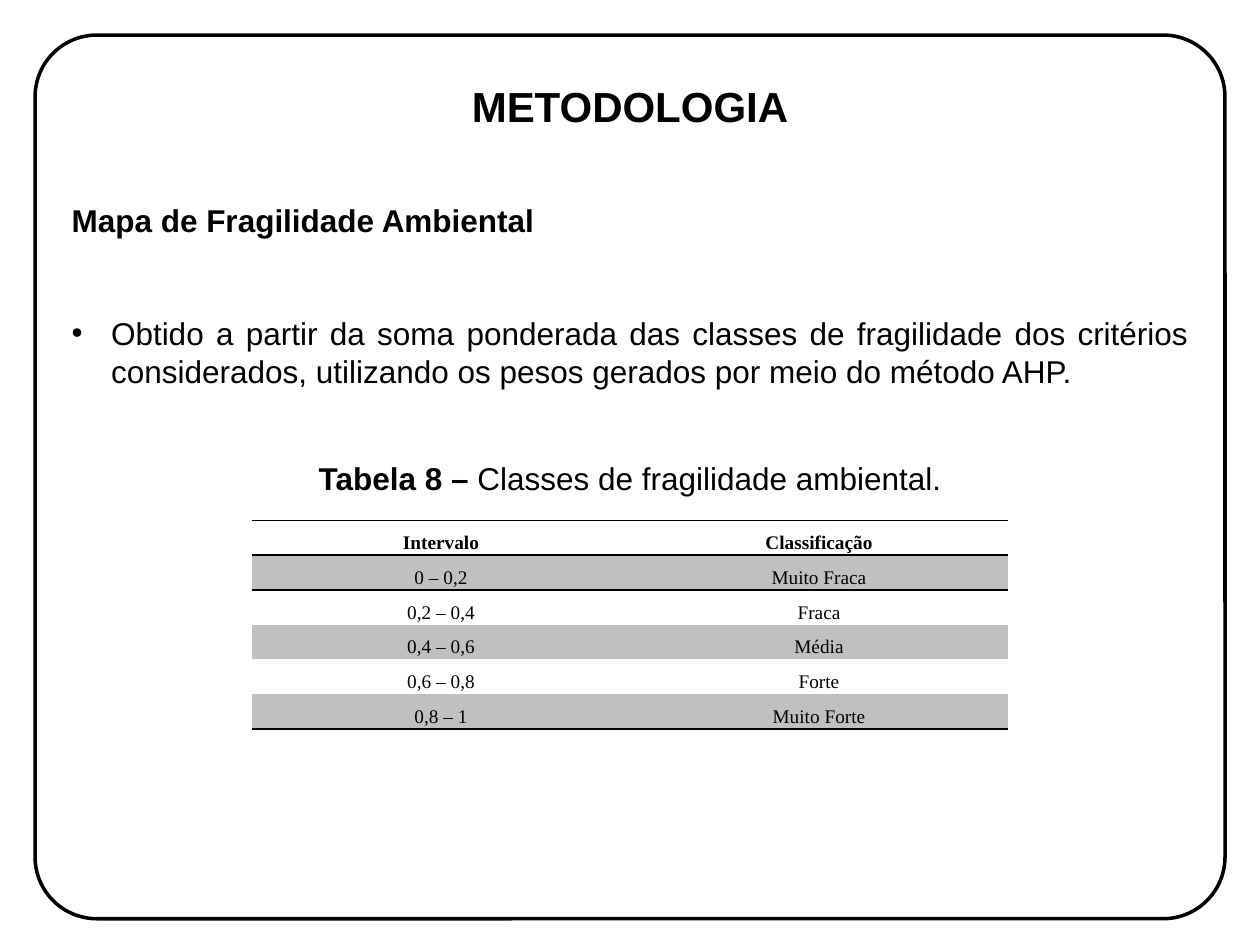
from pptx import Presentation
from pptx.dml.color import RGBColor
from pptx.enum import shapes, text
from pptx.oxml import parse_xml
from pptx.oxml.ns import nsdecls
from pptx.util import Pt

TITLE = "METODOLOGIA"
HEADING = "Mapa de Fragilidade Ambiental"
BULLET = ("Obtido a partir da soma ponderada das classes de fragilidade dos critérios "
          "considerados, utilizando os pesos gerados por meio do método AHP.")
CAPTION = [("Tabela 8 –", True), (" Classes de fragilidade ambiental.", False)]
ROWS = [
    ("Intervalo", "Classificação"),
    ("0 – 0,2", "Muito Fraca"),
    ("0,2 – 0,4", "Fraca"),
    ("0,4 – 0,6", "Média"),
    ("0,6 – 0,8", "Forte"),
    ("0,8 – 1", "Muito Forte"),
]
BLACK, GREY = "000000", "C0C0C0"
LINE_PITCH = 21.5
ROW_HEIGHT = 19.8
NO_TABLE_STYLE = "{2D5ABB26-0587-4C30-8999-92F81FD0307C}"


def color(value):
    return RGBColor.from_string(value)


def points(*values):
    return [Pt(value) for value in values]


def style(paragraph, size, align, bold=None, name="Arial"):
    paragraph.alignment = align
    font = paragraph.font
    font.size, font.name, font.bold = Pt(size), name, bold
    font.color.rgb = color(BLACK)


def add_frame(slide):
    frame = slide.shapes.add_shape(shapes.MSO_SHAPE.ROUNDED_RECTANGLE,
                                   *points(20, 20, 680, 505))
    frame.adjustments[0] = 0.07
    frame.fill.background()
    frame.line.color.rgb = color(BLACK)
    frame.line.width = Pt(2)
    frame.shadow.inherit = False


def add_title(slide):
    title = slide.shapes.title
    title.left, title.top, title.width, title.height = points(20, 21, 680, 79)
    title.text_frame.text = TITLE
    title.text_frame.vertical_anchor = text.MSO_ANCHOR.MIDDLE
    style(title.text_frame.paragraphs[0], 24, text.PP_ALIGN.CENTER, True)


def add_body(slide):
    frame = slide.shapes.add_textbox(*points(33.9, 111.6, 652.3, 247)).text_frame
    frame.word_wrap = True
    heading, bullet = frame.paragraphs[0], frame.add_paragraph()
    heading.text, bullet.text = HEADING, BULLET
    for paragraph, bold in ((heading, True), (bullet, False)):
        style(paragraph, 18, text.PP_ALIGN.JUSTIFY, bold)
        paragraph.line_spacing = Pt(LINE_PITCH)
    heading.space_after = Pt(2 * LINE_PITCH)
    properties = bullet._p.get_or_add_pPr()
    properties.set("marL", str(Pt(22.5)))
    properties.set("indent", str(Pt(-22.5)))
    marks = (f'<a:buFont {nsdecls("a")} typeface="Arial"/>',
             f'<a:buChar {nsdecls("a")} char="•"/>')
    position = list(properties).index(properties.defRPr) if hasattr(properties, "defRPr") \
        else len(properties) - 1
    for offset, mark in enumerate(marks):
        properties.insert(position + offset, parse_xml(mark))


def add_caption(slide):
    frame = slide.shapes.add_textbox(*points(173.3, 258.5, 373.4, 29)).text_frame
    frame.word_wrap = False
    paragraph = frame.paragraphs[0]
    style(paragraph, 18, text.PP_ALIGN.CENTER)
    for content, bold in CAPTION:
        run = paragraph.add_run()
        run.text = content
        run.font.bold = bold


def add_borders(cell, sides):
    properties = cell._tc.get_or_add_tcPr()
    for position, side in enumerate(sides):
        properties.insert(position, parse_xml(
            f'<a:ln{side} {nsdecls("a")} w="{Pt(1)}"><a:solidFill>'
            f'<a:srgbClr val="{BLACK}"/></a:solidFill></a:ln{side}>'))


def add_classes(slide):
    table = slide.shapes.add_table(len(ROWS), 2, *points(
        144, 297.4, 432, ROW_HEIGHT * len(ROWS))).table
    table.first_row = table.horz_banding = False
    table._tbl.tblPr[0].text = NO_TABLE_STYLE
    borders = {0: "TB", 1: "T", len(ROWS) - 1: "B"}
    for row, values in enumerate(ROWS):
        table.rows[row].height = Pt(ROW_HEIGHT)
        for column, value in enumerate(values):
            cell = table.cell(row, column)
            cell.text = value
            cell.vertical_anchor = text.MSO_ANCHOR.MIDDLE
            cell.margin_left = cell.margin_right = Pt(5)
            cell.margin_top = cell.margin_bottom = 0
            paragraph = cell.text_frame.paragraphs[0]
            style(paragraph, 11, text.PP_ALIGN.CENTER, row == 0, "Times New Roman")
            paragraph.line_spacing = 1.5
            if row % 2:
                cell.fill.solid()
                cell.fill.fore_color.rgb = color(GREY)
            else:
                cell.fill.background()
            add_borders(cell, borders.get(row, ""))


def main():
    presentation = Presentation()
    presentation.slide_width, presentation.slide_height = points(720, 540)
    slide = presentation.slides.add_slide(presentation.slide_layouts[5])
    add_frame(slide)
    add_title(slide)
    add_body(slide)
    add_classes(slide)
    add_caption(slide)
    presentation.save("out.pptx")


if __name__ == "__main__":
    main()
